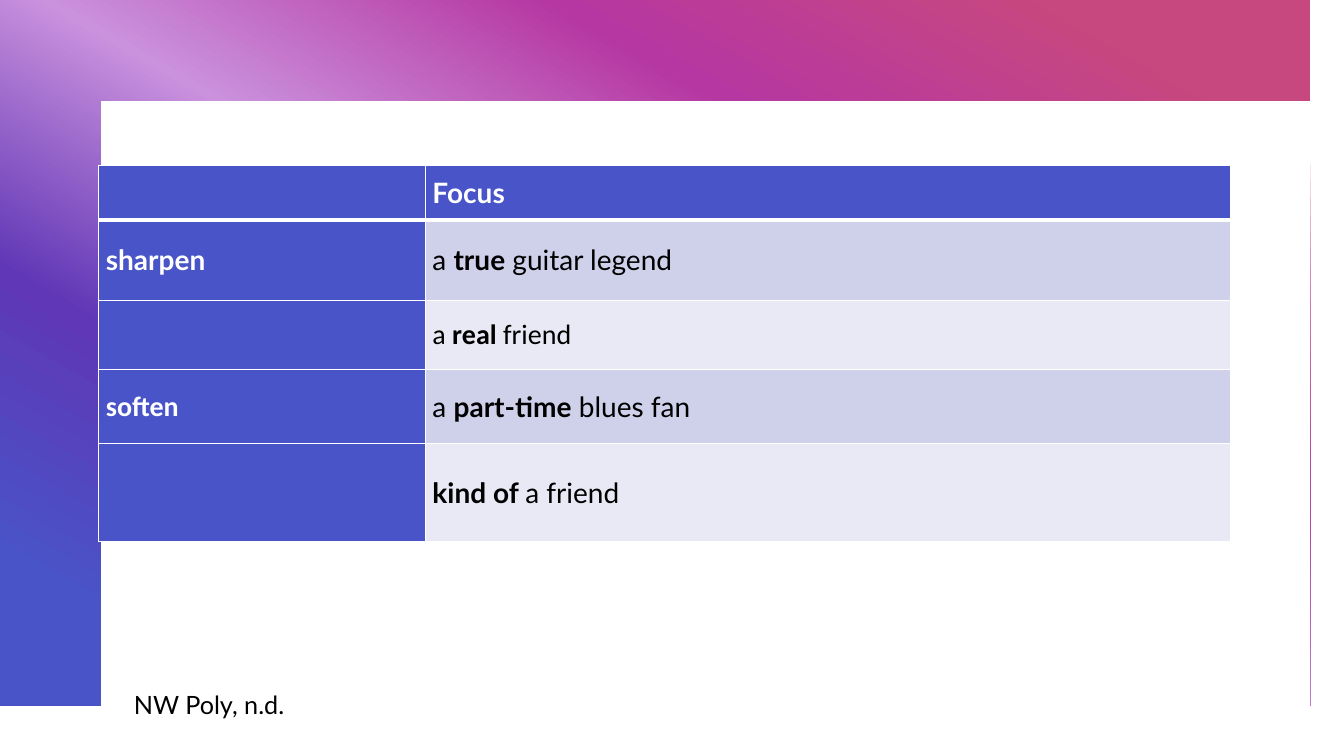
from lxml import etree
from pptx import Presentation
from pptx.dml.color import RGBColor
from pptx.enum.text import MSO_ANCHOR
from pptx.oxml import parse_xml
from pptx.oxml.ns import nsdecls
from pptx.util import Inches, Pt

MIDDLE = MSO_ANCHOR.MIDDLE
BLANK_LAYOUT = 6
WHITE, BLACK, BLUE = "FFFFFF", "000000", "4854C7"
BANDS = ["CFD1EB", "E9E9F5"]
FRAME_STOPS = [(10, "C7487E"), (30, "B637A1"), (50, "CA91DD"),
               (70, "6037B6"), (90, BLUE)]
FRAME_OUTLINE = [(0, 0), (13.33, 0), (13.33, 6.68), (12.51, 6.68),
                 (12.51, 0.84), (0.84, 0.84), (0.84, 6.68), (0, 6.68)]
COLUMN_WIDTHS = [3.24, 7.99]
ROW_HEIGHTS = [0.54, 0.8, 0.69, 0.73, 0.97]
FOCUS_ROWS = [
    ("", [("Focus", True)]),
    ("sharpen", [("a ", False), ("true", True), (" guitar legend", False)]),
    ("", [("a ", False), ("real", True), (" friend", False)]),
    ("soften", [("a ", False), ("part-time", True), (" blues fan", False)]),
    ("", [("kind of ", True), ("a friend", False)]),
]
CALIBRI_CELLS = {(2, 1), (3, 0)}


def rgb(color):
    """Return the colour for a hex string."""
    return RGBColor.from_string(color)


def set_font(paragraph, size, color, name="Lato"):
    """Set the font of a whole paragraph."""
    paragraph.font.size = Pt(size)
    paragraph.font.name = name
    paragraph.font.color.rgb = rgb(color)


def add_gradient_frame(slide):
    """Draw the gradient frame around the white panel."""
    builder = slide.shapes.build_freeform(0, 0, scale=Inches(1))
    builder.add_line_segments(FRAME_OUTLINE[1:], close=True)
    frame = builder.convert_to_shape()
    frame.shadow.inherit = False
    frame.line.fill.background()
    frame.fill.gradient()
    frame.fill.gradient_angle = 240
    stops = frame.fill.gradient_stops
    stop_list = stops[0]._gs.getparent()
    for child in list(stop_list):
        stop_list.remove(child)
    for position, color in FRAME_STOPS:
        stop_list.append(parse_xml(
            f'<a:gs {nsdecls("a")} pos="{position * 1000}">'
            f'<a:srgbClr val="{color}"/></a:gs>'))


def set_borders(cell, top, bottom):
    """Give a cell white borders, with top and bottom widths in points."""
    properties = cell._tc.get_or_add_tcPr()
    widths = {"lnL": 1, "lnR": 1, "lnT": top, "lnB": bottom}
    for index, (side, width) in enumerate(widths.items()):
        border = parse_xml(f'<a:{side} {nsdecls("a")} w="{Pt(width)}"/>')
        fill = etree.SubElement(border, border.tag.replace(side, "solidFill"))
        color = etree.SubElement(fill, border.tag.replace(side, "srgbClr"))
        color.set("val", WHITE)
        properties.insert(index, border)


def fill_cell(cell, runs, fill, color, font_name):
    """Write runs of (text, bold) into a filled cell."""
    cell.fill.solid()
    cell.fill.fore_color.rgb = rgb(fill)
    cell.vertical_anchor = MIDDLE
    cell.margin_left = cell.margin_right = Inches(0.07)
    cell.margin_top = cell.margin_bottom = 0
    paragraph = cell.text_frame.paragraphs[0]
    set_font(paragraph, 20, color, font_name)
    for text, bold in runs:
        run = paragraph.add_run()
        run.text = text
        run.font.bold = bold
        run.font.size = Pt(20)
        run.font.name = font_name
        run.font.color.rgb = rgb(color)


def add_focus_table(slide):
    """Add the table of sharpening and softening phrases."""
    table = slide.shapes.add_table(
        len(ROW_HEIGHTS), len(COLUMN_WIDTHS), Inches(0.98), Inches(1.64),
        Inches(sum(COLUMN_WIDTHS)), Inches(sum(ROW_HEIGHTS))).table
    table.first_col = True
    for column, width in zip(table.columns, COLUMN_WIDTHS):
        column.width = Inches(width)
    for row, (label, phrase) in enumerate(FOCUS_ROWS):
        table.rows[row].height = Inches(ROW_HEIGHTS[row])
        label_runs = [(label, True)] if label else []
        for column, runs in enumerate((label_runs, phrase)):
            heading = row == 0 or column == 0
            fill = BLUE if heading else BANDS[(row - 1) % 2]
            font_name = "Calibri" if (row, column) in CALIBRI_CELLS else "Lato"
            cell = table.cell(row, column)
            fill_cell(cell, runs, fill, WHITE if heading else BLACK, font_name)
            set_borders(cell, 3 if row == 1 else 1, 3 if row == 0 else 1)


def add_citation(slide, text):
    """Add the citation below the panel."""
    citation = slide.shapes.add_textbox(
        Inches(1.23), Inches(6.79), Inches(2.23), Inches(0.4)).text_frame
    citation.word_wrap = True
    citation.text = text
    set_font(citation.paragraphs[0], 18, BLACK)


def main():
    """Build and save the slide."""
    presentation = Presentation()
    presentation.slide_width = Inches(13.33)
    presentation.slide_height = Inches(7.5)
    slide = presentation.slides.add_slide(
        presentation.slide_layouts[BLANK_LAYOUT])
    add_gradient_frame(slide)
    add_focus_table(slide)
    add_citation(slide, "NW Poly, n.d.")
    presentation.save("out.pptx")


if __name__ == "__main__":
    main()
